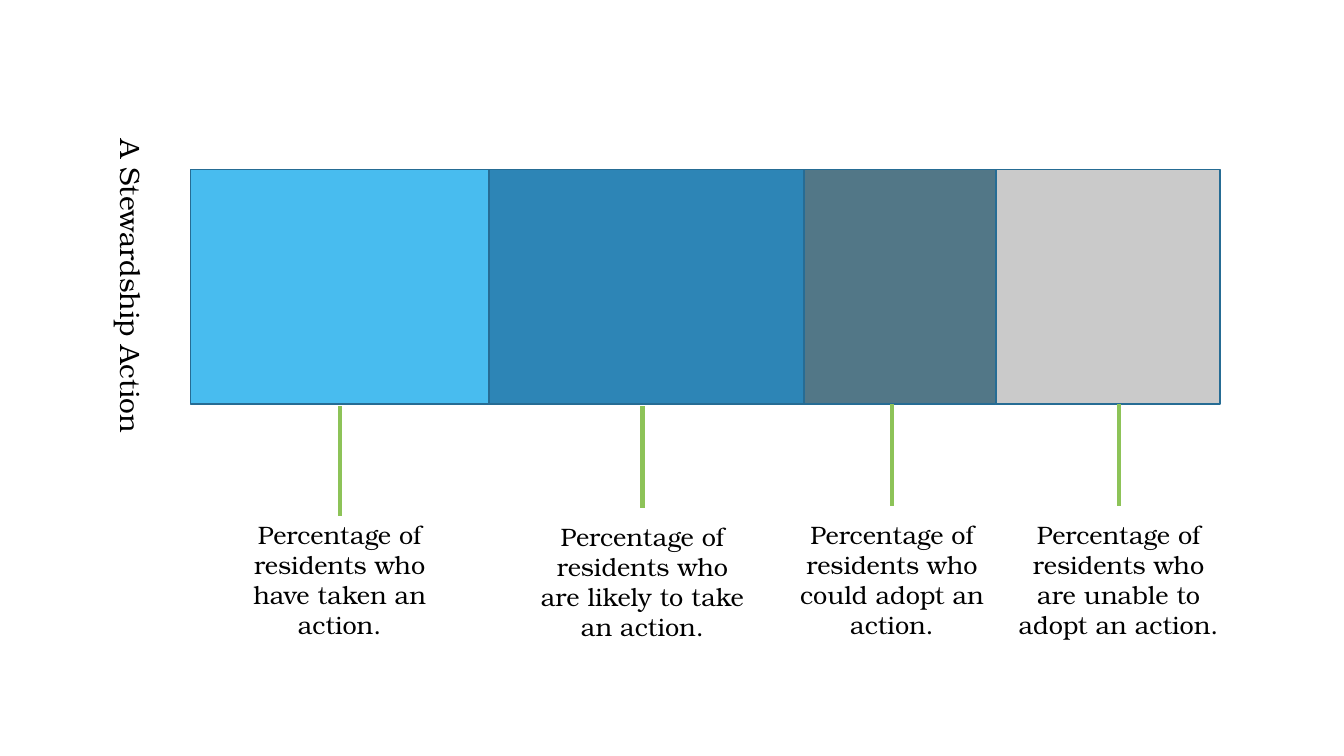
from lxml import etree
from pptx import Presentation, util as u
from pptx.dml.color import RGBColor
from pptx.enum import shapes, text
from pptx.oxml.ns import qn

COLORS = {"taken": "48BCEF", "likely": "2D85B6", "could": "527787",
          "unable": "CACACA", "outline": "266C94", "leader": "8DC358",
          "text": "000000"}

BAR_LEFT, BAR_TOP, BAR_HEIGHT = 4.8, 4.27, 5.92
LABEL_WIDTH, LABEL_HEIGHT = 5.87, 3.33

# colour, segment width, leader x, leader top, leader bottom, label top, label
SEGMENTS = [
    ("taken", 7.52, 8.56, 10.24, 13.0, 12.95,
     "Percentage of residents who have taken an action."),
    ("likely", 7.95, 16.19, 10.24, 12.8, 13.0,
     "Percentage of residents who are likely to take an action."),
    ("could", 4.83, 22.48, 10.19, 12.75, 12.95,
     "Percentage of residents who could adopt an action."),
    ("unable", 5.64, 28.19, 10.19, 12.75, 12.95,
     "Percentage of residents who are unable to adopt an action."),
]


def rgb(name):
    return RGBColor.from_string(COLORS[name])


def write(tf, words, size=18, color="text", font="TeX Gyre Bonum",
          align=text.PP_ALIGN.CENTER):
    p = tf.paragraphs[0]
    p.alignment = align
    r = p.add_run()
    r.text = words
    r.font.name = font
    r.font.size = u.Pt(size)
    r.font.color.rgb = rgb(color)


class Canvas:
    """Holds the current slide and the line styles its elements share."""
    outline_width = u.Pt(1.25)
    leader_width = u.Pt(3)

    def __init__(self, s):
        self.s = s

    def segment(self, x, y, w, h, color):
        sp = self.s.shapes.add_shape(shapes.MSO_SHAPE.RECTANGLE,
                                     u.Cm(x), u.Cm(y), u.Cm(w), u.Cm(h))
        sp.shadow.inherit = False
        sp.fill.solid()
        sp.fill.fore_color.rgb = rgb(color)
        sp.line.color.rgb = rgb("outline")
        sp.line.width = self.outline_width

    def leader(self, x, top, bottom):
        cxn = self.s.shapes.add_connector(shapes.MSO_CONNECTOR.STRAIGHT,
                                          u.Cm(x), u.Cm(top), u.Cm(x), u.Cm(bottom))
        cxn.line.color.rgb = rgb("leader")
        cxn.line.width = self.leader_width
        etree.SubElement(cxn._element.spPr, qn("a:effectLst"))

    def label(self, x, y, w, h, words, rotation=0, **fmt):
        sp = self.s.shapes.add_textbox(u.Cm(x), u.Cm(y), u.Cm(w), u.Cm(h))
        sp.rotation = rotation
        tf = sp.text_frame
        tf.word_wrap = True
        tf.auto_size = text.MSO_AUTO_SIZE.SHAPE_TO_FIT_TEXT
        write(tf, words, **fmt)


def main():
    prs = Presentation()
    prs.slide_width, prs.slide_height = u.Cm(33.87), u.Cm(19.05)
    canvas = Canvas(prs.slides.add_slide(prs.slide_layouts[6]))

    canvas.label(-1.22, 6.65, 9.04, 1.12, "A Stewardship Action",
                 rotation=90, size=20)
    left = BAR_LEFT
    for color, width, x, top, bottom, label_top, words in SEGMENTS:
        canvas.segment(left, BAR_TOP, width, BAR_HEIGHT, color)
        canvas.leader(x, top, bottom)
        canvas.label(x - LABEL_WIDTH / 2, label_top, LABEL_WIDTH, LABEL_HEIGHT, words)
        left += width

    prs.save("out.pptx")


if __name__ == "__main__":
    main()
